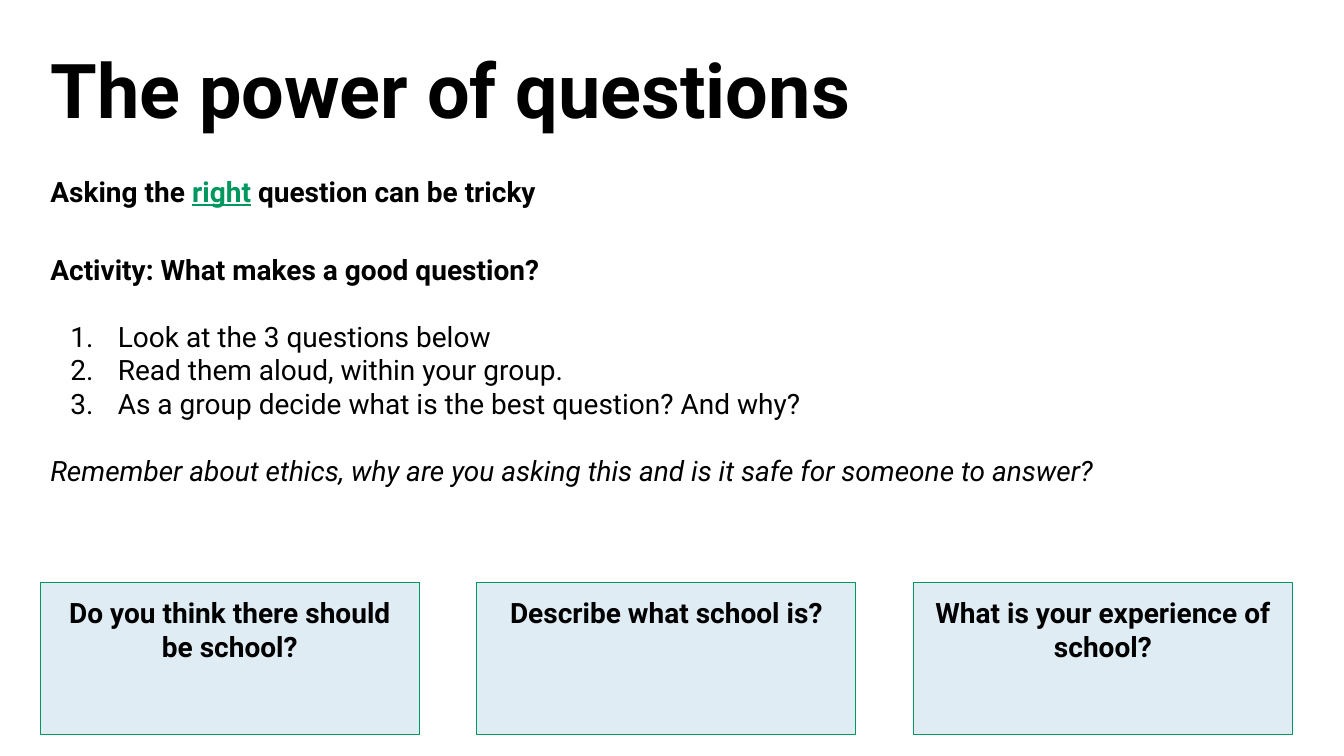
from dataclasses import dataclass

from lxml import etree
from pptx import Presentation
from pptx.dml.color import RGBColor
from pptx.enum.shapes import MSO_SHAPE
from pptx.enum.text import MSO_ANCHOR, PP_ALIGN
from pptx.oxml.ns import qn
from pptx.util import Emu, Inches, Pt

PROCESS = MSO_SHAPE.FLOWCHART_PROCESS
TOP, MIDDLE = MSO_ANCHOR.TOP, MSO_ANCHOR.MIDDLE
LEFT, CENTER = PP_ALIGN.LEFT, PP_ALIGN.CENTER

FONT = "Roboto"
BLACK, GREEN, PALE_BLUE = "000000", "00985F", "E0ECF4"
MARGIN = 0.4
CARD_WIDTH, CARD_HEIGHT, CARD_TOP = 3.76, 1.51, 5.78
COLUMN_STEP = 4.33
CARD_INSET = 0.13
BLANK_LINE = 24


@dataclass
class Line:
    text: str
    bold: bool = False
    italic: bool = False
    numbered: bool = False
    space_before: float = 0


ACTIVITY = [
    Line("Activity: What makes a good question?", bold=True),
    Line("Look at the 3 questions below", numbered=True, space_before=BLANK_LINE),
    Line("Read them aloud, within your group.", numbered=True),
    Line("As a group decide what is the best question? And why?", numbered=True),
    Line("Remember about ethics, why are you asking this and is it safe for someone to answer?",
         italic=True, space_before=BLANK_LINE),
]
QUESTIONS = [
    "Do you think there should be school?",
    "Describe what school is?",
    "What is your experience of school?",
]


def color(value: str) -> RGBColor:
    return RGBColor.from_string(value)


def set_font(paragraph, size: float = 20, bold: bool = True, italic: bool = False) -> None:
    font = paragraph.font
    font.name, font.size = FONT, Pt(size)
    font.bold, font.italic = bold, italic
    font.color.rgb = color(BLACK)


def number(paragraph) -> None:
    """Give the paragraph an automatic number and a hanging indent."""
    properties = paragraph._p.get_or_add_pPr()
    properties.set("marL", str(Inches(0.67)))
    properties.set("indent", str(Inches(-0.47)))
    etree.SubElement(properties, qn("a:buFont"), typeface=FONT)
    etree.SubElement(properties, qn("a:buAutoNum"), type="arabicPeriod")


def place(shape, left: float, top: float, width: float, height: float) -> None:
    shape.left, shape.top = Inches(left), Inches(top)
    shape.width, shape.height = Inches(width), Inches(height)


def add_text_frame(slide, top: float, width: float, height: float):
    box = slide.shapes.add_textbox(Inches(MARGIN), Inches(top), Inches(width), Inches(height))
    box.text_frame.word_wrap = True
    return box.text_frame


def format_title(slide) -> None:
    title = slide.shapes.title
    place(title, MARGIN, 0.59, 11.5, 0.68)
    frame = title.text_frame
    frame.text = "The power of questions"
    frame.vertical_anchor = MIDDLE
    paragraph = frame.paragraphs[0]
    paragraph.alignment = LEFT
    paragraph.line_spacing = 0.9
    set_font(paragraph, size=54)


def add_introduction(slide) -> None:
    paragraph = add_text_frame(slide, 1.68, 9.52, 0.44).paragraphs[0]
    set_font(paragraph)
    paragraph.add_run().text = "Asking the "
    emphasis = paragraph.add_run()
    emphasis.text = "right"
    emphasis.font.underline = True
    emphasis.font.color.rgb = color(GREEN)
    paragraph.add_run().text = " question can be tricky"


def add_activity(slide) -> None:
    frame = add_text_frame(slide, 2.12, 12.35, 2.79)
    frame.margin_top = Inches(0.38)
    for index, line in enumerate(ACTIVITY):
        paragraph = frame.add_paragraph() if index else frame.paragraphs[0]
        paragraph.text = line.text
        if line.space_before:
            paragraph.space_before = Pt(line.space_before)
        if line.numbered:
            number(paragraph)
        set_font(paragraph, bold=line.bold, italic=line.italic)


def add_question_card(slide, column: int, question: str) -> None:
    card = slide.shapes.add_shape(PROCESS, Emu(0), Emu(0), Emu(0), Emu(0))
    place(card, MARGIN + column * COLUMN_STEP, CARD_TOP, CARD_WIDTH, CARD_HEIGHT)
    card.shadow.inherit = False
    card.fill.solid()
    card.fill.fore_color.rgb = color(PALE_BLUE)
    card.line.color.rgb = color(GREEN)
    card.line.width = Pt(0.75)
    frame = card.text_frame
    frame.word_wrap = True
    frame.vertical_anchor = TOP
    frame.margin_left = frame.margin_right = Inches(CARD_INSET)
    frame.margin_top = frame.margin_bottom = Inches(CARD_INSET)
    frame.text = question
    frame.paragraphs[0].alignment = CENTER
    set_font(frame.paragraphs[0])


def main() -> None:
    presentation = Presentation()
    presentation.slide_width, presentation.slide_height = Inches(13.33), Inches(7.5)
    slide = presentation.slides.add_slide(presentation.slide_layouts[5])
    format_title(slide)
    add_introduction(slide)
    add_activity(slide)
    for column, question in enumerate(QUESTIONS):
        add_question_card(slide, column, question)
    presentation.save("out.pptx")


if __name__ == "__main__":
    main()
